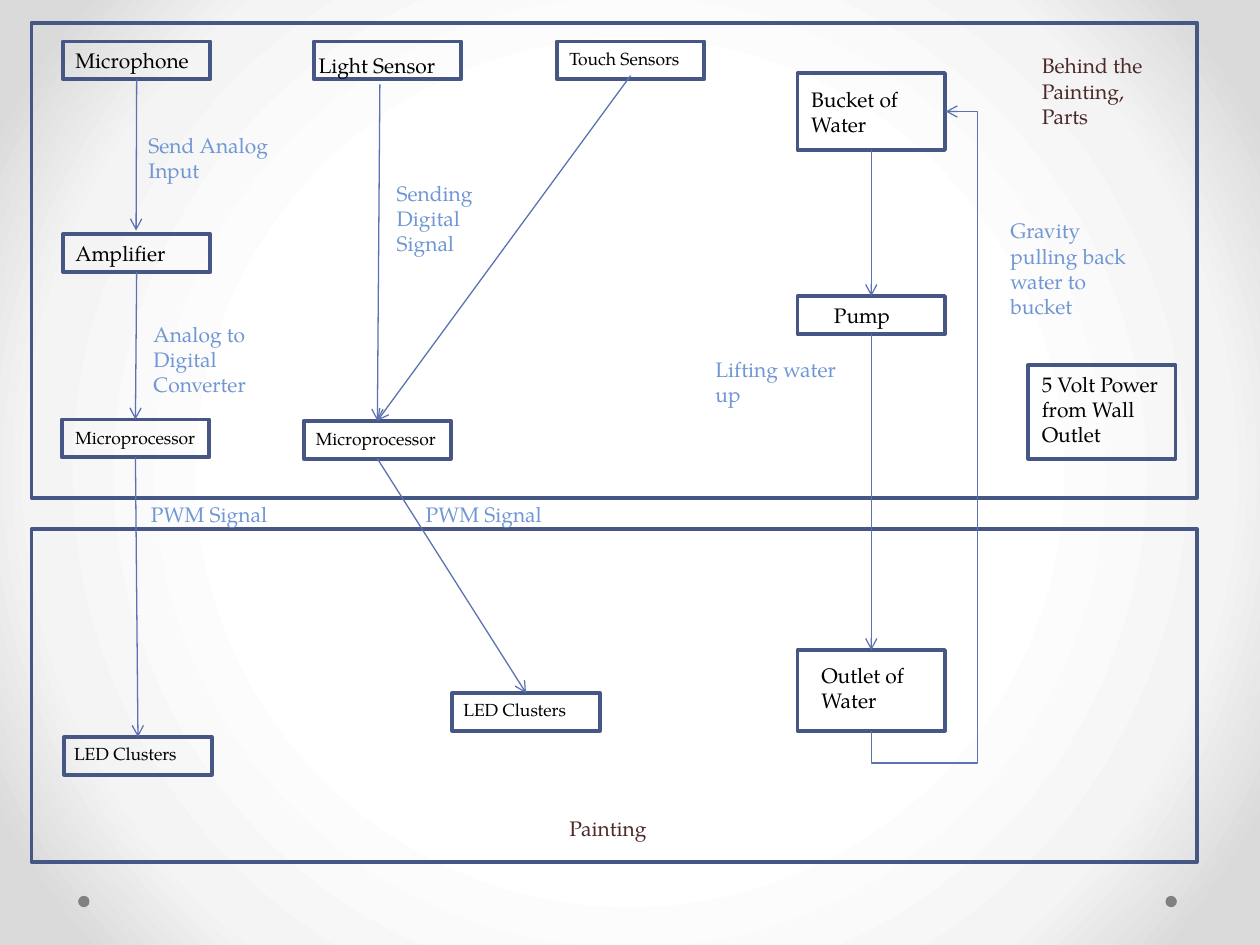
from lxml import etree
from pptx import Presentation
from pptx.dml.color import RGBColor
from pptx.enum.shapes import MSO_CONNECTOR as Connector, MSO_SHAPE as Shape
from pptx.oxml import parse_xml
from pptx.oxml.ns import nsdecls, qn
from pptx.util import Inches, Pt

FONT = "TeX Gyre Pagella"
BLACK = RGBColor(0x00, 0x00, 0x00)
BROWN = RGBColor(0x4E, 0x29, 0x29)
LABEL_BLUE = RGBColor(0x70, 0x97, 0xD3)
BOX_BLUE = RGBColor(0x47, 0x57, 0x85)
ARROW_BLUE = RGBColor(0x5C, 0x72, 0xB2)
GREY = RGBColor(0x80, 0x80, 0x80)
BOX_WIDTH = 1.17
TOP, BOTTOM, RIGHT = 0, 2, 3

presentation = Presentation()
presentation.slide_width = Inches(10)
presentation.slide_height = Inches(7.5)
slide = presentation.slides.add_slide(presentation.slide_layouts[6])
shapes = slide.shapes


def add_text(text, left, top, height, size, color):
    text_box = shapes.add_textbox(Inches(left), Inches(top), Inches(BOX_WIDTH), Inches(height))
    text_frame = text_box.text_frame
    text_frame.word_wrap = True
    text_frame.text = text
    for paragraph in text_frame.paragraphs:
        font = paragraph.runs[0].font
        font.name = FONT
        font.size = Pt(size)
        font.color.rgb = color
    return text_box


def add_arrow(kind, start, end):
    """Join two (shape, side) pairs; an end may also be an (x, y) point in inches."""
    arrow = shapes.add_connector(kind, 0, 0, 0, 0)
    arrow.begin_connect(*start)
    if isinstance(end[0], float):
        arrow.end_x, arrow.end_y = Inches(end[0]), Inches(end[1])
    else:
        arrow.end_connect(*end)
    arrow.line.color.rgb = ARROW_BLUE
    arrow.line.width = Pt(0.75)
    etree.SubElement(arrow.line._get_or_add_ln(), qn("a:tailEnd"), type="arrow")
    etree.SubElement(arrow._element.spPr, qn("a:effectLst"))
    return arrow


# Background: white centre fading to grey corners
background_fill = slide.background.fill
background_fill.gradient()
gradient = background_fill._fill._gradFill
for child in list(gradient):
    gradient.remove(child)
stop_list = etree.SubElement(gradient, qn("a:gsLst"))
for position, color in ((50, "FFFFFF"), (76, "F4F4F4"), (92, "DADADA")):
    stop = etree.SubElement(stop_list, qn("a:gs"), pos=str(position * 1000))
    etree.SubElement(stop, qn("a:srgbClr"), val=color)
gradient.append(parse_xml(
    f'<a:path {nsdecls("a")} path="circle">'
    '<a:fillToRect l="50000" t="50000" r="50000" b="50000"/></a:path>'))

for left in (0.62, 9.25):
    dot = shapes.add_shape(Shape.OVAL, Inches(left), Inches(7.11), Inches(0.09), Inches(0.09))
    dot.shadow.inherit = False
    dot.fill.solid()
    dot.fill.fore_color.rgb = GREY
    dot.line.fill.background()

# Outlined boxes: left, top, width, height
boxes = {}
for name, left, top, width, height in (
    ("behind painting", 0.25, 0.18, 9.25, 3.77),
    ("painting", 0.25, 4.2, 9.25, 2.64),
    ("microphone", 0.5, 0.33, BOX_WIDTH, 0.3),
    ("amplifier", 0.5, 1.86, BOX_WIDTH, 0.3),
    ("sound processor", 0.49, 3.33, BOX_WIDTH, 0.3),
    ("sound LEDs", 0.51, 5.85, BOX_WIDTH, 0.3),
    ("light sensor", 2.49, 0.33, BOX_WIDTH, 0.3),
    ("touch sensors", 4.42, 0.33, BOX_WIDTH, 0.3),
    ("sensor processor", 2.41, 3.34, BOX_WIDTH, 0.3),
    ("sensor LEDs", 3.59, 5.5, BOX_WIDTH, 0.3),
    ("bucket", 6.33, 0.58, BOX_WIDTH, 0.61),
    ("pump", 6.33, 2.35, BOX_WIDTH, 0.3),
    ("outlet", 6.33, 5.16, BOX_WIDTH, 0.64),
    ("power", 8.16, 2.9, BOX_WIDTH, 0.74),
):
    box = shapes.add_shape(Shape.RECTANGLE, Inches(left), Inches(top), Inches(width), Inches(height))
    box.shadow.inherit = False
    box.fill.background()
    box.line.color.rgb = BOX_BLUE
    box.line.width = Pt(2.25)
    boxes[name] = box

# Texts: left, top, height, size, colour
light_text = add_text("Light Sensor", 2.43, 0.37, 0.3, 12, BLACK)
touch_text = add_text("Touch Sensors", 4.42, 0.33, 0.27, 10, BLACK)
for text, left, top, height, size, color in (
    ("Microphone", 0.5, 0.33, 0.3, 12, BLACK),
    ("Amplifier", 0.5, 1.86, 0.3, 12, BLACK),
    ("Microprocessor", 0.5, 3.34, 0.27, 10, BLACK),
    ("LED Clusters", 0.49, 5.85, 0.27, 10, BLACK),
    ("Microprocessor", 2.41, 3.35, 0.27, 10, BLACK),
    ("LED Clusters", 3.58, 5.5, 0.27, 10, BLACK),
    ("Bucket of Water", 6.34, 0.64, 0.5, 12, BLACK),
    ("Pump", 6.52, 2.35, 0.3, 12, BLACK),
    ("Outlet of Water", 6.42, 5.21, 0.5, 12, BLACK),
    ("5 Volt Power from Wall Outlet", 8.17, 2.9, 0.71, 12, BLACK),
    ("Behind the\nPainting, Parts", 8.17, 0.37, 0.71, 12, BROWN),
    ("Painting", 4.42, 6.42, 0.3, 12, BROWN),
    ("Send Analog Input", 1.08, 1, 0.5, 12, LABEL_BLUE),
    ("Analog to Digital Converter", 1.12, 2.5, 0.71, 12, LABEL_BLUE),
    ("PWM Signal", 1.1, 3.93, 0.3, 12, LABEL_BLUE),
    ("PWM Signal", 3.28, 3.93, 0.3, 12, LABEL_BLUE),
    ("Sending Digital Signal", 3.05, 1.38, 0.5, 12, LABEL_BLUE),
    ("Lifting water up", 5.58, 2.78, 0.5, 12, LABEL_BLUE),
    ("Gravity pulling back water to bucket", 7.92, 1.68, 0.91, 12, LABEL_BLUE),
):
    add_text(text, left, top, height, size, color)

# Arrows
add_arrow(Connector.STRAIGHT, (boxes["microphone"], BOTTOM), (1.08, 1.83))
for source, target in (
    (boxes["amplifier"], "sound processor"),
    (boxes["sound processor"], "sound LEDs"),
    (light_text, "sensor processor"),
    (touch_text, "sensor processor"),
    (boxes["sensor processor"], "sensor LEDs"),
    (boxes["bucket"], "pump"),
    (boxes["pump"], "outlet"),
):
    add_arrow(Connector.STRAIGHT, (source, BOTTOM), (boxes[target], TOP))

# Return flow leaves the outlet downwards and enters the bucket from the right
return_flow = add_arrow(Connector.ELBOW, (boxes["outlet"], BOTTOM), (boxes["bucket"], RIGHT))
return_flow.left, return_flow.top = Inches(4.75), Inches(3.05)
return_flow.width, return_flow.height = Inches(4.92), Inches(0.59)
transform = return_flow._element.spPr.find(qn("a:xfrm"))
for attribute, value in (("rot", "5400000"), ("flipH", "1"), ("flipV", "1")):
    transform.set(attribute, value)
geometry = return_flow._element.spPr.find(qn("a:prstGeom"))
geometry.set("prst", "bentConnector4")
adjustments = geometry.find(qn("a:avLst"))
for name, value in (("adj1", -5100), ("adj2", 142400)):
    etree.SubElement(adjustments, qn("a:gd"), name=name, fmla=f"val {value}")

presentation.save("out.pptx")
